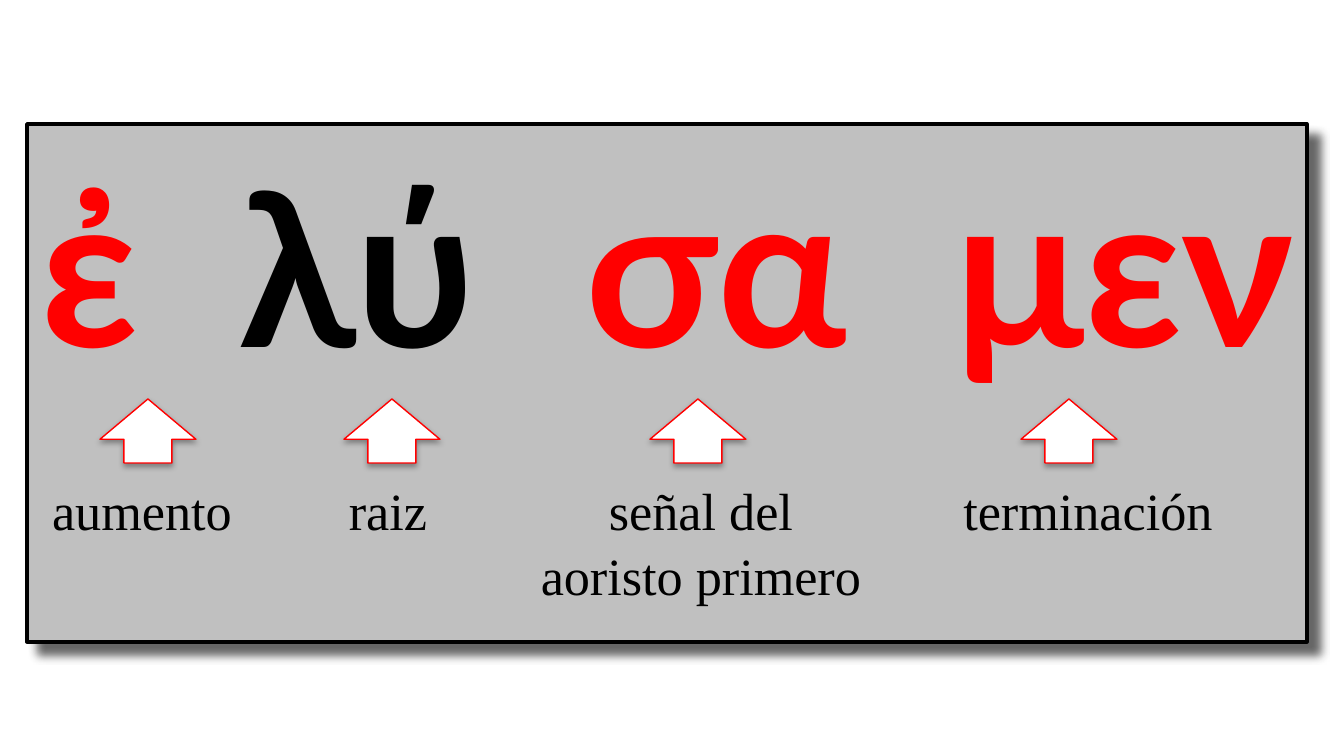
"""Builds a slide that splits a Greek aorist verb into its labelled parts."""
from lxml.etree import SubElement
from pptx import Presentation
from pptx.dml.color import RGBColor
from pptx.enum.shapes import MSO_SHAPE
from pptx.enum.text import PP_ALIGN
from pptx.oxml.ns import qn
from pptx.util import Pt

SCALE = 914400 / 134.4
SLIDE_SIZE = (1344, 756)
PANEL = (27, 124, 1280, 518)
PARTS = [
    {"greek": "ἐ", "color": "FF0000", "greek_center": 90, "arrow_center": 148,
     "label": ["aumento"], "label_center": 142},
    {"greek": "λύ", "color": "000000", "greek_center": 357, "arrow_center": 392,
     "label": ["raiz"], "label_center": 388},
    {"greek": "σα", "color": "FF0000", "greek_center": 716, "arrow_center": 698,
     "label": ["señal del", "aoristo primero"], "label_center": 701},
    {"greek": "μεν", "color": "FF0000", "greek_center": 1124, "arrow_center": 1069,
     "label": ["terminación"], "label_center": 1088},
]
GREEK_ROW = {"top": 133, "width": 380, "height": 258}
ARROW_ROW = {"top": 399, "width": 96, "height": 64}
LABEL_ROW = {"top": 478, "width": 360, "line_height": 63}
GREEK_FONT = {"name": "Lato", "size": Pt(115), "bold": True}
LABEL_FONT = {"name": "Times New Roman", "size": Pt(28), "bold": False}
PANEL_SHADOW = {"color": "333333", "alpha": 75, "blur": 5, "distance": 8.5, "angle": 45}
ARROW_SHADOW = {"color": "000000", "alpha": 35, "blur": 3.1, "distance": 1.8, "angle": 90}


def px(value):
    return round(value * SCALE)


def rgb(color):
    return RGBColor.from_string(color)


def add_shadow(shape, shadow):
    shape.shadow.inherit = False
    effects = shape._element.spPr.find(qn("a:effectLst"))
    outer = SubElement(effects, qn("a:outerShdw"), {
        "blurRad": str(Pt(shadow["blur"])), "dist": str(Pt(shadow["distance"])),
        "dir": str(shadow["angle"] * 60000), "algn": "ctr", "rotWithShape": "0"})
    color = SubElement(outer, qn("a:srgbClr"), val=shadow["color"])
    SubElement(color, qn("a:alpha"), val=str(shadow["alpha"] * 1000))


def add_block(page, kind, frame, fill, line, line_width, shadow):
    shape = page.shapes.add_shape(kind, *map(px, frame))
    shape.fill.solid()
    shape.fill.fore_color.rgb = rgb(fill)
    shape.line.color.rgb = rgb(line)
    shape.line.width = Pt(line_width)
    add_shadow(shape, shadow)
    return shape


def add_text(page, lines, center, top, width, height, font, color):
    box = page.shapes.add_textbox(*map(px, (center - width / 2, top, width, height)))
    frame = box.text_frame
    frame.word_wrap = True
    for side in ("left", "right", "top", "bottom"):
        setattr(frame, f"margin_{side}", 0)
    for index, line in enumerate(lines):
        para = frame.paragraphs[0] if index == 0 else frame.add_paragraph()
        para.alignment = PP_ALIGN.CENTER
        para.space_before = Pt(1.5 if index else 0)
        span = para.add_run()
        span.text = line
        for name, value in font.items():
            setattr(span.font, name, value)
        span.font.color.rgb = rgb(color)


def add_part(page, part):
    add_text(page, [part["greek"]], part["greek_center"], **GREEK_ROW,
             font=GREEK_FONT, color=part["color"])
    width, height = ARROW_ROW["width"], ARROW_ROW["height"]
    arrow_frame = (part["arrow_center"] - width / 2, ARROW_ROW["top"], width, height)
    arrow = add_block(page, MSO_SHAPE.UP_ARROW, arrow_frame, "FFFFFF", "FF0000", 0.75,
                      ARROW_SHADOW)
    arrow.adjustments[0] = 0.5
    arrow.adjustments[1] = 0.63
    add_text(page, part["label"], part["label_center"], LABEL_ROW["top"],
             LABEL_ROW["width"], LABEL_ROW["line_height"] * len(part["label"]),
             LABEL_FONT, "000000")


def main():
    deck = Presentation()
    deck.slide_width, deck.slide_height = map(px, SLIDE_SIZE)
    page = deck.slides.add_slide(deck.slide_layouts[6])
    add_block(page, MSO_SHAPE.RECTANGLE, PANEL, "C0C0C0", "000000", 1.8, PANEL_SHADOW)
    for part in PARTS:
        add_part(page, part)
    deck.save("out.pptx")


if __name__ == "__main__":
    main()
